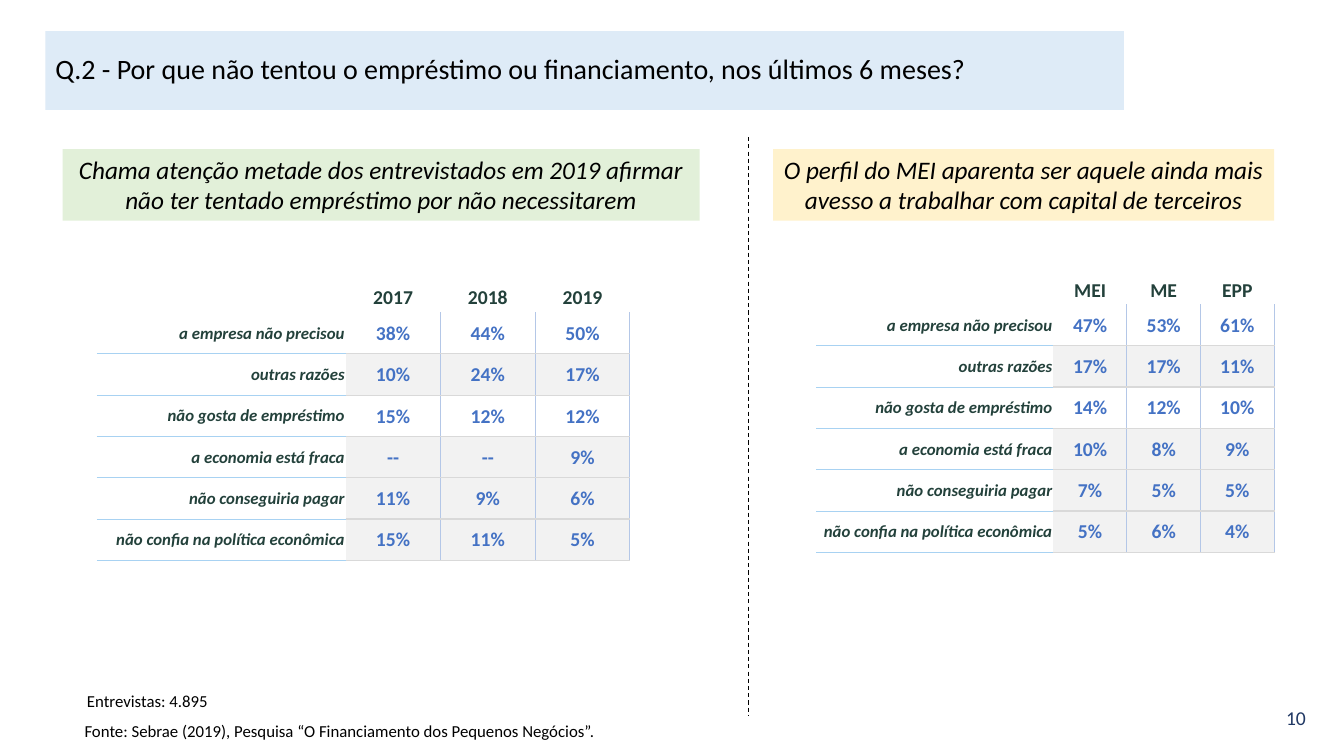
"""Build the slide on why firms did not seek a loan, by year and by firm size."""
from pptx import Presentation
from pptx.dml.color import RGBColor as Rgb
from pptx.enum.dml import MSO_LINE as Dash
from pptx.enum.shapes import MSO_CONNECTOR as Link
from pptx.enum.text import MSO_ANCHOR as Anchor, MSO_AUTO_SIZE as Fit, PP_ALIGN as Align
from pptx.oxml import parse_xml
from pptx.oxml.ns import nsdecls, qn
from pptx.util import Inches, Pt

HUES = {"black": "000000", "navy": "203864", "green": "23413B", "blue": "4472C4",
        "sky": "DEEBF7", "sand": "FFF2CC", "mint": "E2F0D9", "band": "F2F2F2",
        "rule": "A8D2F2", "side": "B4C7E7", "grey": "D9D9D9"}
PLAIN = "{2D5ABB26-0587-4C30-8999-92F81FD0307C}"

deck = Presentation()
deck.slide_width, deck.slide_height = Inches(40 / 3), Inches(7.5)
unit = deck.slide_width / 160
slide = deck.slides.add_slide(deck.slide_layouts[5])


def write(frame, text, hue, align, look):
    """Put one formatted paragraph in a text frame."""
    par = frame.paragraphs[0]
    par.alignment = align
    run = par.add_run()
    run.text = text
    run.font.name = "Calibri"
    run.font.color.rgb = Rgb.from_string(HUES[hue])
    for key, val in look.items():
        setattr(run.font, key, val)
    return par


def grid(left, top, wide, high, rows, hue, align, look, edges, bands=()):
    """Add a table whose columns and rows are each of one size."""
    count = len(rows[0])
    spot = [round(n * unit) for n in (left, top, wide * count, high * len(rows))]
    table = slide.shapes.add_table(len(rows), count, *spot).table
    table.first_row = table.horz_banding = False
    table._tbl.tblPr.find(qn("a:tableStyleId")).text = PLAIN
    for r, row in enumerate(rows):
        for c, text in enumerate(row):
            cell = table.cell(r, c)
            cell.vertical_anchor = Anchor.MIDDLE
            cell.margin_left = cell.margin_right = cell.margin_top = Inches(0.01)
            cell.margin_bottom = 0
            write(cell.text_frame, text, hue, align, look)
            props = cell._tc.get_or_add_tcPr()
            for side, (tint, size) in edges.items():
                if (side == "L" and c == 0) or (side == "T" and r == 0):
                    continue
                props.append(parse_xml(
                    f'<a:ln{side} {nsdecls("a")} w="{Pt(size)}"><a:solidFill>'
                    f'<a:srgbClr val="{HUES[tint]}"/></a:solidFill></a:ln{side}>'))
            if r in bands:
                cell.fill.solid()
                cell.fill.fore_color.rgb = Rgb.from_string(HUES["band"])
            else:
                cell.fill.background()


title = slide.shapes.title
spot = {"left": 5.4, "top": 3.72, "width": 128.4, "height": 9.36}
for key, val in spot.items():
    setattr(title, key, round(val * unit))
title.fill.solid()
title.fill.fore_color.rgb = Rgb.from_string(HUES["sky"])
for key, val in {"vertical_anchor": Anchor.MIDDLE, "word_wrap": True,
                 "auto_size": Fit.NONE}.items():
    setattr(title.text_frame, key, val)
head = write(title.text_frame,
             "Q.2 - Por que não tentou o empréstimo ou financiamento, nos últimos 6 meses?",
             "black", Align.LEFT, {"size": Pt(20)})
head.line_spacing = 0.9

note = {"size": Pt(12)}
claim = {"size": Pt(18), "italic": True}
boxes = [
    ((151.92, 83.4, 7.08, 4.8), "10", "navy", Align.LEFT, {"size": Pt(14)}, None),
    ((8.88, 85.2, 81, 3.6),
     "Fonte: Sebrae (2019), Pesquisa “O Financiamento dos Pequenos Negócios”.",
     "black", Align.LEFT, note, None),
    ((5.4, 81.6, 20.52, 3.6), "Entrevistas: 4.895", "black", Align.RIGHT, note, None),
    ((92.04, 17.76, 59.64, 8.52),
     "O perfil do MEI aparenta ser aquele ainda mais avesso a trabalhar com capital de terceiros",
     "black", Align.CENTER, claim, "sand"),
    ((7.44, 17.76, 75.84, 8.52),
     "Chama atenção metade dos entrevistados em 2019 afirmar não ter tentado "
     "empréstimo por não necessitarem",
     "black", Align.CENTER, claim, "mint"),
]
for spot, text, hue, align, look, fill in boxes:
    box = slide.shapes.add_textbox(*[round(n * unit) for n in spot])
    box.text_frame.word_wrap = True
    box.text_frame.auto_size = Fit.SHAPE_TO_FIT_TEXT
    write(box.text_frame, text, hue, align, look)
    if fill:
        box.fill.solid()
        box.fill.fore_color.rgb = Rgb.from_string(HUES[fill])

ends = [round(n * unit) for n in (89.16, 16.32, 89.16, 85.2)]
split = slide.shapes.add_connector(Link.STRAIGHT, *ends)
split.line.color.rgb = Rgb.from_string(HUES["black"])
split.line.width = Pt(0.75)
split.line.dash_style = Dash.DASH
split._element.spPr.append(parse_xml(f'<a:effectLst {nsdecls("a")}/>'))

causes = ["a empresa não precisou", "outras razões", "não gosta de empréstimo",
          "a economia está fraca", "não conseguiria pagar",
          "não confia na política econômica"]
years = [["38%", "44%", "50%"], ["10%", "24%", "17%"], ["15%", "12%", "12%"],
         ["--", "--", "9%"], ["11%", "9%", "6%"], ["15%", "11%", "5%"]]
sizes = [["47%", "53%", "61%"], ["17%", "17%", "11%"], ["14%", "12%", "10%"],
         ["10%", "8%", "9%"], ["7%", "5%", "5%"], ["5%", "6%", "4%"]]
bold = {"size": Pt(14), "bold": True}
slant = {"size": Pt(12), "bold": True, "italic": True}
rules = {"T": ("rule", 0.75), "B": ("rule", 0.75)}
frame = {"L": ("side", 0.75), "R": ("side", 0.75), "T": ("grey", 1), "B": ("grey", 1)}

panels = [(11.52, 31.68, 37.2, 29.64, 11.28, ["2017", "2018", "2019"], years),
          (97.2, 30.84, 36.24, 28.2, 8.76, ["MEI", "ME", "EPP"], sizes)]
for left, crown, top, label, wide, heads, shares in panels:
    start = left + label
    grid(start, crown, wide, 7.32, [heads], "green", Align.CENTER, bold, {})
    grid(left, top, label, 4.92, [[cause] for cause in causes],
         "green", Align.RIGHT, slant, rules)
    grid(start, top, wide, 4.92, shares, "blue", Align.CENTER, bold, frame, (1, 3, 4, 5))

deck.save("out.pptx")
